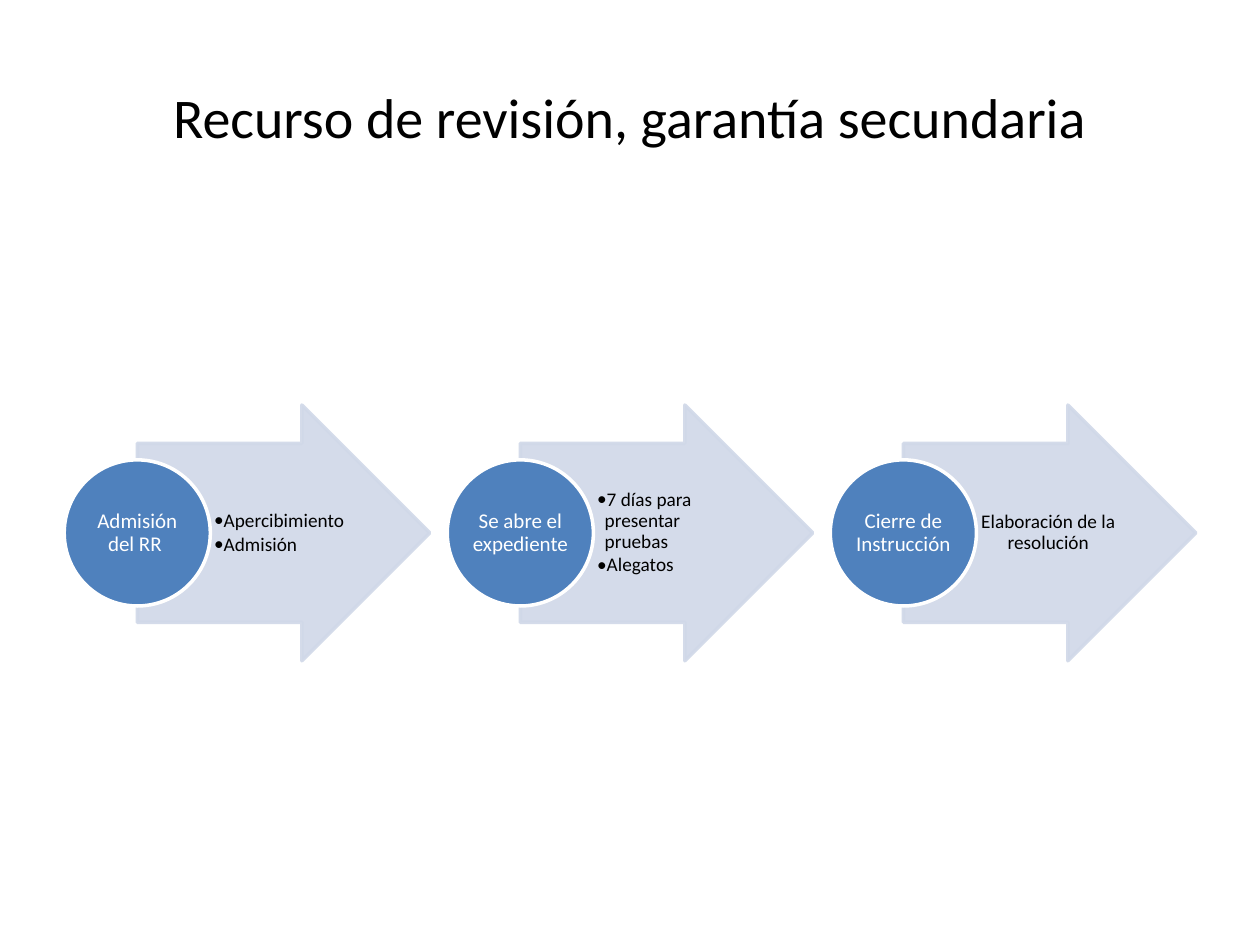
from lxml.etree import SubElement
from pptx import Presentation
from pptx.dml.color import RGBColor
from pptx.enum.shapes import MSO_SHAPE
from pptx.enum.text import MSO_ANCHOR, PP_ALIGN
from pptx.oxml.ns import qn
from pptx.util import Inches, Pt


def paint(fill, color, opacity=100):
    fill.solid()
    fill.fore_color.rgb = RGBColor.from_string(color)
    if opacity < 100:
        color_element = fill._xPr.find(qn("a:solidFill"))[0]
        SubElement(color_element, qn("a:alpha"), val=str(opacity * 1000))


def add_text(slide, box, lines, size, color, margins, space_after=0, bulleted=False):
    textbox = slide.shapes.add_textbox(*[Inches(length) for length in box])
    frame = textbox.text_frame
    frame.word_wrap = True
    frame.vertical_anchor = MSO_ANCHOR.MIDDLE
    frame.margin_left, frame.margin_right = [Inches(margin) for margin in margins[:2]]
    frame.margin_top = frame.margin_bottom = Inches(margins[2])
    frame.text = "\n".join(lines)
    for paragraph in frame.paragraphs:
        paragraph.alignment = PP_ALIGN.LEFT if bulleted else PP_ALIGN.CENTER
        if bulleted:
            paragraph.level = 1
            properties = paragraph._p.get_or_add_pPr()
            properties.set("marL", str(Inches(0.06)))
            properties.set("indent", str(-Inches(0.06)))
            SubElement(properties, qn("a:buFont"), typeface="Calibri")
            SubElement(properties, qn("a:buChar"), char="••")
        if space_after:
            paragraph.line_spacing = 0.9
            paragraph.space_after = Pt(space_after)
        for run in paragraph.runs:
            run.font.name = "Calibri"
            run.font.size = Pt(size)
            paint(run.font.fill, color)


presentation = Presentation()
presentation.slide_width = Inches(10)
presentation.slide_height = Inches(7.5)
slide = presentation.slides.add_slide(presentation.slide_layouts[6])

add_text(slide, (0.5, 0.3, 9, 1.25), ["Recurso de revisión, garantía secundaria"],
         32, "000000", (0.1, 0.1, 0.05))

stages = [
    ("Admisión del RR ", ["Apercibimiento", "Admisión"]),
    ("Se abre el expediente", ["7 días para presentar pruebas", "Alegatos"]),
    ("Cierre de Instrucción", ["Elaboración de la resolución"]),
]
first_left, column_step = 0.51, 3.04
diameter, arrow_width, arrow_height = 1.16, 2.32, 2.03
middle = 4.23
label_size = 0.82
label_inset = (diameter - label_size) / 2

for column, (stage, details) in enumerate(stages):
    left = first_left + column * column_step
    circle_top = middle - diameter / 2
    bulleted = len(details) > 1

    arrow = slide.shapes.add_shape(
        MSO_SHAPE.RIGHT_ARROW, Inches(left + diameter / 2),
        Inches(middle - arrow_height / 2), Inches(arrow_width), Inches(arrow_height))
    arrow.adjustments[0] = 0.7
    arrow.adjustments[1] = 0.5
    paint(arrow.fill, "D0D8E8", 90)
    paint(arrow.line.fill, "D0D8E8", 90)

    add_text(slide, (left + diameter, middle - 0.71, 1.13, 1.42), details, 11, "000000",
             (0.03, 0.02, 0.01), 1.65 if bulleted else 3.85, bulleted)

    circle = slide.shapes.add_shape(
        MSO_SHAPE.OVAL, Inches(left), Inches(circle_top),
        Inches(diameter), Inches(diameter))
    paint(circle.fill, "4F81BD")
    paint(circle.line.fill, "FFFFFF")

    for shape in (arrow, circle):
        shape.shadow.inherit = False
        shape.line.width = Pt(2)

    add_text(slide, (left + label_inset, circle_top + label_inset, label_size, label_size),
             [stage], 12, "FFFFFF", (0.01, 0.01, 0.01), 4.2)

presentation.save("out.pptx")
